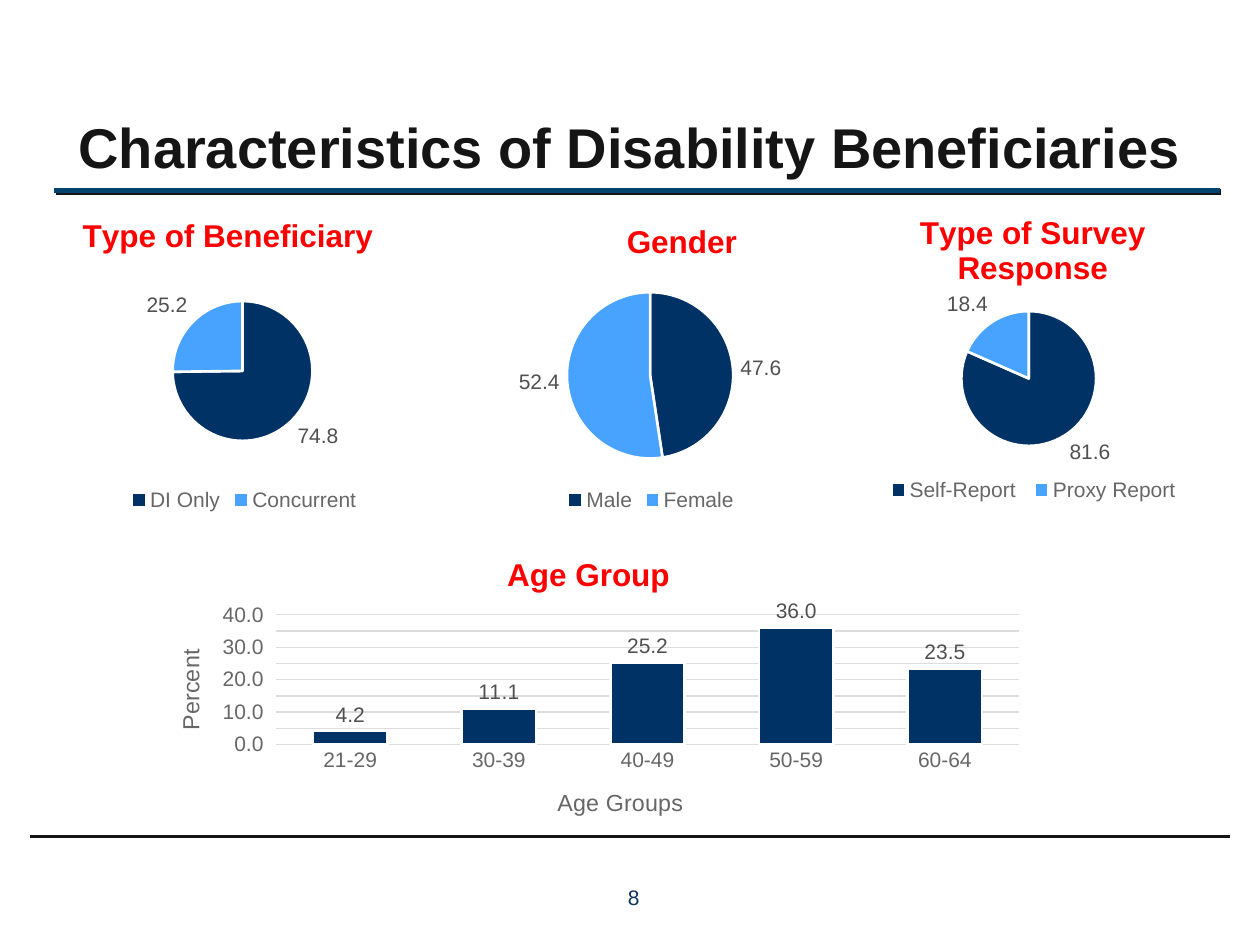
"""Build a slide with three pie charts and a column chart of disability beneficiaries."""
from lxml import etree
from pptx import Presentation
from pptx.chart.data import CategoryChartData
from pptx.dml.color import RGBColor
from pptx.enum import chart as ch, shapes, text
from pptx.oxml import ns
from pptx.util import Inches, Pt

THEME = {
    "font": "Arial", "ink": "151515", "rule": "00436E", "number": "10335A",
    "heading": "FF0000", "label": "505050", "axis": "676767", "grid": "DCDCDC",
    "white": "FFFFFF", "series": ["003266", "47A3FF"],
    "title_size": 32, "heading_size": 18, "axis_title_size": 13.3, "size": 12, "base_size": 10,
}


def style(font, color, size, bold=False):
    values = {"name": THEME["font"], "size": Pt(size), "bold": bold}
    for key, value in values.items():
        setattr(font, key, value)
    font.color.rgb = RGBColor.from_string(THEME[color])


def place(element, index, frame, box, inner=False):
    for old in element.findall(ns.qn("c:layout")):
        element.remove(old)
    layout = etree.Element(ns.qn("c:layout"))
    manual = etree.SubElement(layout, ns.qn("c:manualLayout"))
    left, top, width, height = frame
    fractions = [(box[0] - left) / width, (box[1] - top) / height]
    fractions += [size / full for size, full in zip(box[2:], (width, height))]
    values = [("layoutTarget", "inner")] if inner else []
    values += [("xMode", "edge"), ("yMode", "edge")]
    values += [(key, f"{value:.4f}") for key, value in zip("xywh", fractions)]
    for key, value in values:
        etree.SubElement(manual, ns.qn("c:" + key)).set("val", value)
    element.insert(index, layout)


prs = Presentation()
prs.slide_width, prs.slide_height = Inches(10), Inches(7.5)
s = prs.slides.add_slide(prs.slide_layouts[5])

rules = [(0.43, 9.68, 1.51, "rule", 3), (0.24, 9.76, 6.64, "ink", 1.5)]
for left, right, y, color, weight in rules:
    line = s.shapes.add_connector(
        shapes.MSO_CONNECTOR.STRAIGHT, Inches(left), Inches(y), Inches(right), Inches(y))
    line.line.color.rgb = RGBColor.from_string(THEME[color])
    line.line.width = Pt(weight)
    effects = etree.SubElement(line._element.spPr, ns.qn("a:effectLst"))
    if color == "rule":
        shadow = etree.SubElement(
            effects, ns.qn("a:outerShdw"), dist=str(Pt(1.4)), dir="2700000", algn="ctr", rotWithShape="0")
        etree.SubElement(shadow, ns.qn("a:srgbClr"), val=THEME["ink"])

number = s.shapes.add_textbox(Inches(4.53), Inches(6.97), Inches(1), Inches(0.38))
title = s.shapes.title
for key, value in {"left": 0, "top": 0.23, "width": 10, "height": 1.25}.items():
    setattr(title, key, Inches(value))
labels = [
    (title, "Characteristics of Disability Beneficiaries", "ink", "title_size", True, text.MSO_ANCHOR.BOTTOM),
    (number, "8", "number", "size", False, text.MSO_ANCHOR.TOP),
]
for sp, words, color, size, bold, anchor in labels:
    tf = sp.text_frame
    tf.word_wrap = True
    tf.auto_size = text.MSO_AUTO_SIZE.NONE
    tf.vertical_anchor = anchor
    p = tf.paragraphs[0]
    p.alignment = text.PP_ALIGN.CENTER
    r = p.add_run()
    r.text = words
    style(r.font, color, THEME[size], bold)

PIE, COLUMN = ch.XL_CHART_TYPE.PIE, ch.XL_CHART_TYPE.COLUMN_CLUSTERED
charts = [
    (PIE, "Type of Beneficiary", (0.17, 1.63, 3.52, 2.48), (0.61, 1.66), (1.37, 2.39, 1.11, 1.11),
     (0.99, 3.83, 1.9, 0.3), {"DI Only": 74.8, "Concurrent": 25.2}),
    (PIE, "Gender", (3.56, 1.63, 3.21, 2.48), (4.93, 1.71), (4.5, 2.32, 1.32, 1.32),
     (4.46, 3.83, 1.42, 0.3), {"Male": 47.6, "Female": 52.4}),
    (PIE, "Type of Survey\nResponse", (6.39, 1.38, 3.55, 2.81), (7.27, 1.66), (7.63, 2.47, 1.07, 1.07),
     (6.98, 3.74, 2.45, 0.3), {"Self-Report": 81.6, "Proxy Report": 18.4}),
    (COLUMN, "Age Group", (1.12, 4.19, 7.1, 2.48), (3.98, 4.35), (2.19, 4.88, 5.9, 1.03),
     None, {"21-29": 4.2, "30-39": 11.1, "40-49": 25.2, "50-59": 36.0, "60-64": 23.5}),
]
for kind, heading, frame, heading_at, plot_box, legend_box, values in charts:
    data = CategoryChartData()
    data.categories = list(values)
    data.add_series("Series 1", list(values.values()))
    chart = s.shapes.add_chart(kind, *map(Inches, frame), data).chart
    style(chart.font, "ink", THEME["base_size"])
    chart.has_title = True
    chart.chart_title.text_frame.text = heading
    for p in chart.chart_title.text_frame.paragraphs:
        p.alignment = text.PP_ALIGN.CENTER
        style(p.runs[0].font, "heading", THEME["heading_size"], True)
    place(chart.chart_title._element, 1, frame, heading_at)
    place(chart._chartSpace.chart.plotArea, 0, frame, plot_box, True)

    plot = chart.plots[0]
    plot.vary_by_categories = kind == PIE
    plot.has_data_labels = True
    options = {"show_value": True, "show_percentage": False, "number_format": "0.0",
               "number_format_is_linked": False, "position": ch.XL_LABEL_POSITION.OUTSIDE_END}
    for key, value in options.items():
        setattr(plot.data_labels, key, value)
    style(plot.data_labels.font, "label", THEME["size"])

    series = plot.series[0]
    parts = [series.points[i] for i in range(len(values))] if kind == PIE else [series]
    for part, color in zip(parts, THEME["series"]):
        part.format.fill.solid()
        part.format.fill.fore_color.rgb = RGBColor.from_string(color)
        part.format.line.color.rgb = RGBColor.from_string(THEME["white"])
        part.format.line.width = Pt(1.5)

    chart.has_legend = kind == PIE
    if chart.has_legend:
        chart.legend.position = ch.XL_LEGEND_POSITION.BOTTOM
        chart.legend.include_in_layout = False
        style(chart.legend.font, "axis", THEME["size"])
        place(chart.legend._element, 1, frame, legend_box)

plot.gap_width = 100
axes = [(chart.category_axis, "Age Groups", (4.39, 6.22), "NONE"),
        (chart.value_axis, "Percent", (1.36, 5.12), "OUTSIDE")]
for axis, words, at, tick in axes:
    axis.major_tick_mark = ch.XL_TICK_MARK[tick]
    style(axis.tick_labels.font, "axis", THEME["size"])
    axis.axis_title.text_frame.text = words
    style(axis.axis_title.text_frame.paragraphs[0].runs[0].font, "axis", THEME["axis_title_size"])
    place(axis.axis_title._element, 1, frame, at)
body = chart.value_axis.axis_title.text_frame._txBody.bodyPr
body.set("rot", "-5400000")
body.set("vert", "horz")
for key, value in {"minimum_scale": 0, "maximum_scale": 40, "major_unit": 5}.items():
    setattr(chart.value_axis, key, value)
chart.value_axis.tick_labels.number_format = "0.0"
chart.value_axis.tick_labels.number_format_is_linked = False
chart.value_axis.format.line.fill.background()
for line in (chart.category_axis.format.line, chart.value_axis.major_gridlines.format.line):
    line.color.rgb = RGBColor.from_string(THEME["grid"])
    line.width = Pt(0.75)

prs.save("out.pptx")
